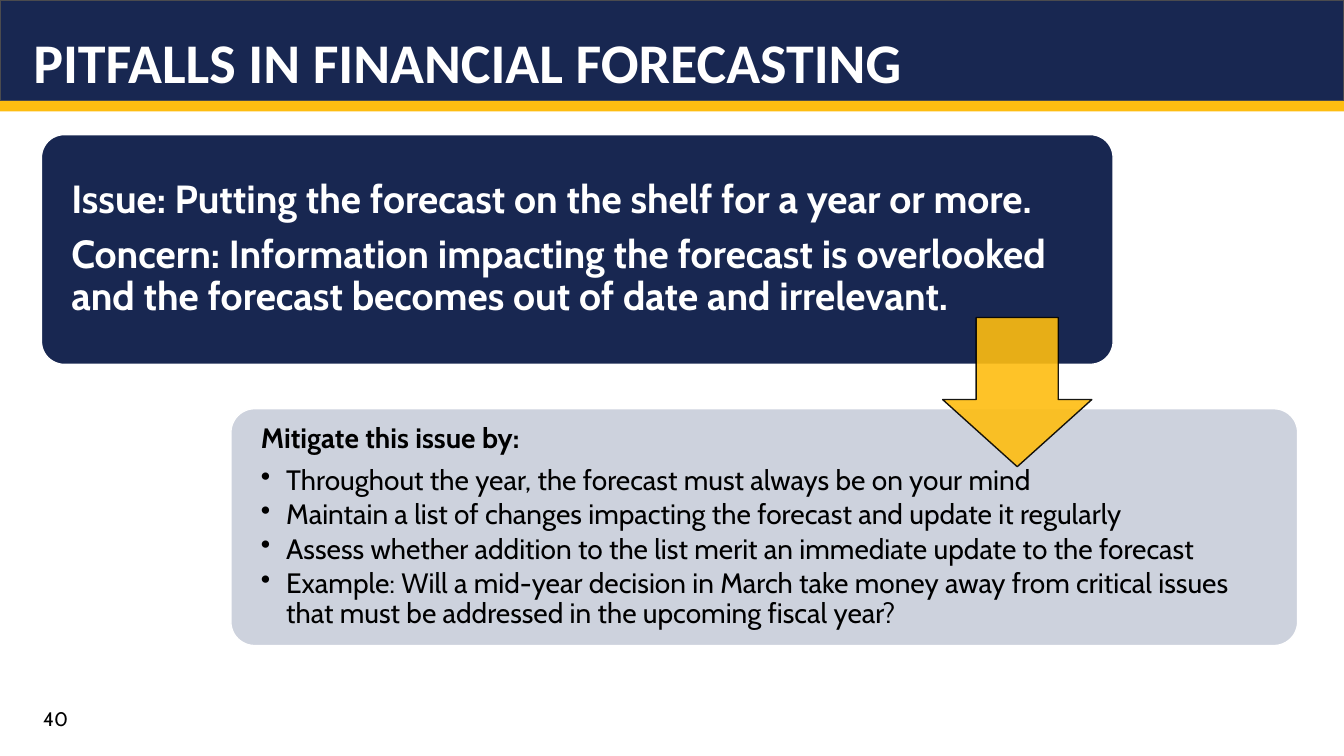
from lxml import etree
from pptx import Presentation, util as u
from pptx.dml.color import RGBColor
from pptx.enum import shapes, text
from pptx.oxml.ns import qn

NAVY = RGBColor(0x18, 0x27, 0x51)
GOLD = RGBColor(0xFE, 0xBD, 0x11)
PALE = RGBColor(0xCD, 0xD2, 0xDD)
GREY = RGBColor(0x4B, 0x4B, 0x4E)
WHITE = RGBColor(0xFF, 0xFF, 0xFF)
BLACK = RGBColor(0, 0, 0)

W, H = u.Inches(13.33), u.Inches(7.5)
KIND = shapes.MSO_SHAPE

ISSUE = [
    "Issue: Putting the forecast on the shelf for a year or more.",
    "Concern: Information impacting the forecast is overlooked and the "
    "forecast becomes out of date and irrelevant.",
]
MITIGATION = [
    "Throughout the year, the forecast must always be on your mind",
    "Maintain a list of changes impacting the forecast and update it regularly",
    "Assess whether addition to the list merit an immediate update to the forecast",
    "Example: Will a mid-year decision in March take money away from critical "
    "issues that must be addressed in the upcoming fiscal year?",
]


def place(left, top, width, height):
    """Turn percentages of the slide's width and height into lengths."""
    return [int(share * side / 100)
            for share, side in zip((left, top, width, height), (W, H, W, H))]


def set_all(obj, values):
    for name, value in values.items():
        setattr(obj, name, value)


def add_block(s, kind, box, fill, line=None, adjust=()):
    sp = s.shapes.add_shape(kind, *place(*box))
    sp.shadow.inherit = False
    sp.fill.solid()
    sp.fill.fore_color.rgb = fill
    if line is None:
        sp.line.fill.background()
    else:
        sp.line.color.rgb = line
        sp.line.width = u.Pt(1)
    for i, value in enumerate(adjust):
        sp.adjustments[i] = value
    return sp


def set_frame(sp, anchor, side, edge):
    """Wrap and anchor the text, with side and edge margins in inches."""
    tf = sp.text_frame
    set_all(tf, dict(word_wrap=True, vertical_anchor=anchor,
                     margin_left=u.Inches(side), margin_right=u.Inches(side),
                     margin_top=u.Inches(edge), margin_bottom=u.Inches(edge)))
    return tf


def add_bullet(p):
    pPr = p._p.get_or_add_pPr()
    pPr.set("marL", str(u.Inches(0.25)))
    pPr.set("indent", str(-u.Inches(0.25)))
    etree.SubElement(pPr, qn("a:buChar")).set("char", "•")


def add_paragraph(tf, words, size, color, bold=False, font="Cabin",
                  after=0, spacing=0.9, bullet=False):
    p = tf.paragraphs[0] if not tf.text else tf.add_paragraph()
    if bullet:
        add_bullet(p)
    set_all(p, dict(alignment=text.PP_ALIGN.LEFT, line_spacing=spacing,
                    space_after=u.Pt(after)))
    r = p.add_run()
    r.text = words
    set_all(r.font, dict(size=u.Pt(size), name=font, bold=bold))
    r.font.color.rgb = color


def add_card(s, box, fill):
    sp = add_block(s, KIND.ROUNDED_RECTANGLE, box, fill, WHITE, [0.1])
    return set_frame(sp, text.MSO_ANCHOR.MIDDLE, 0.23, 0.11)


def add_label(s, box, anchor, side, words, **style):
    sp = s.shapes.add_textbox(*place(*box))
    add_paragraph(set_frame(sp, anchor, side, 0.05), words, **style)


def make_translucent(sp, percent):
    for color in sp._element.spPr.iter(qn("a:srgbClr")):
        etree.SubElement(color, qn("a:alpha")).set("val", str(percent * 1000))


def main():
    prs = Presentation()
    set_all(prs, dict(slide_width=W, slide_height=H))
    s = prs.slides.add_slide(prs.slide_layouts[6])

    add_block(s, KIND.RECTANGLE, (0, 13.33, 100, 1.4), GOLD)
    add_block(s, KIND.RECTANGLE, (0, 0, 100, 13.33), NAVY, GREY)
    add_label(s, (2.48, 0, 95.05, 13.33), text.MSO_ANCHOR.BOTTOM, 0,
              "PITFALLS IN FINANCIAL FORECASTING",
              size=40, color=WHITE, bold=True, font="Calibri")
    add_label(s, (2.48, 92.8, 15.53, 4.53), text.MSO_ANCHOR.TOP, 0.1,
              "40", size=14, color=BLACK, spacing=1.0)

    tf = add_card(s, (3.08, 17.8, 79.74, 30.4), NAVY)
    for words in ISSUE:
        add_paragraph(tf, words, 28, WHITE, bold=True, after=8.5)

    tf = add_card(s, (17.18, 54.07, 79.37, 31.33), PALE)
    add_paragraph(tf, "Mitigate this issue by:", 20, BLACK, bold=True, after=8)
    for words in MITIGATION:
        add_paragraph(tf, words, 20, BLACK, after=3, bullet=True)

    arrow = add_block(s, KIND.DOWN_ARROW, (70.14, 42, 11.1, 19.73),
                      GOLD, BLACK, [0.55, 0.45])
    make_translucent(arrow, 90)
    prs.save("out.pptx")


if __name__ == "__main__":
    main()
